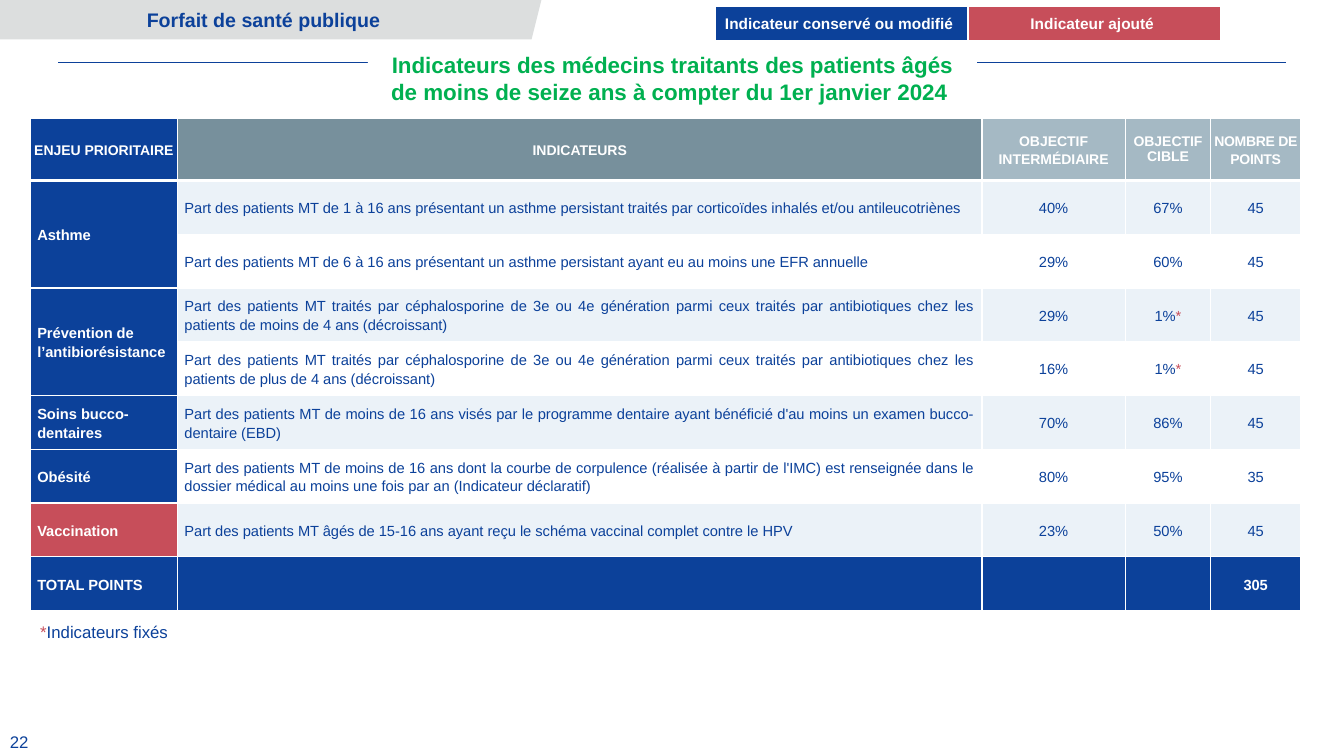
from lxml.etree import SubElement
from pptx import Presentation
from pptx.dml.color import RGBColor
from pptx.enum.shapes import MSO_CONNECTOR, MSO_SHAPE
from pptx.enum.text import MSO_ANCHOR, PP_ALIGN
from pptx.oxml import parse_xml
from pptx.oxml.ns import nsdecls, qn
from pptx.util import Inches, Pt

COLORS = {
    "blue": "0C419A", "red": "C74E5A", "green": "00B050", "white": "FFFFFF",
    "slate": "77909C", "mist": "A5B9C4", "pale": "EBF2F8", "grey": "DCDEDE",
}
HEADERS = [
    ("ENJEU PRIORITAIRE", "blue"), ("INDICATEURS", "slate"), ("OBJECTIF INTERMÉDIAIRE", "mist"),
    ("OBJECTIF CIBLE", "mist"), ("NOMBRE DE POINTS", "mist"),
]
INDICATORS = [
    ("Asthme", "Part des patients MT de 1 à 16 ans présentant un asthme persistant traités par "
     "corticoïdes inhalés et/ou antileucotriènes", "40%", "67%", "45"),
    ("", "Part des patients MT de 6 à 16 ans présentant un asthme persistant ayant eu au moins "
     "une EFR annuelle", "29%", "60%", "45"),
    ("Prévention de l’antibiorésistance", "Part des patients MT traités par céphalosporine de 3e ou 4e "
     "génération parmi ceux traités par antibiotiques chez les patients de moins de 4 ans (décroissant)",
     "29%", "1%*", "45"),
    ("", "Part des patients MT traités par céphalosporine de 3e ou 4e génération parmi ceux traités par "
     "antibiotiques chez les patients de plus de 4 ans (décroissant)", "16%", "1%*", "45"),
    ("Soins bucco-dentaires", "Part des patients MT de moins de 16 ans visés par le programme dentaire "
     "ayant bénéficié d'au moins un examen bucco-dentaire (EBD)", "70%", "86%", "45"),
    ("Obésité", "Part des patients MT de moins de 16 ans dont la courbe de corpulence (réalisée à partir "
     "de l'IMC) est renseignée dans le dossier médical au moins une fois par an (Indicateur déclaratif)",
     "80%", "95%", "35"),
    ("Vaccination", "Part des patients MT âgés de 15-16 ans ayant reçu le schéma vaccinal complet "
     "contre le HPV ", "23%", "50%", "45"),
    ("TOTAL POINTS", "", "", "", "305"),
]
COLUMN_WIDTHS = [1.46, 7.98, 1.42, 0.85, 0.89]
HEADER_HEIGHT = 0.62


def color(name):
    """Return the named colour."""
    return RGBColor.from_string(COLORS[name])


def write(frame, text, size, ink, bold=False, align=PP_ALIGN.LEFT):
    """Write one paragraph, with any asterisk in red, and return it."""
    frame.word_wrap = True
    para = frame.paragraphs[0]
    para.alignment = align
    para.font.name, para.font.size, para.font.bold = "Arial", Pt(size), bold
    para.font.color.rgb = color(ink)
    before, star, after = text.partition("*")
    for piece in filter(None, (before, star, after)):
        span = para.add_run()
        span.text = piece
        if piece == "*":
            span.font.color.rgb = color("red")
    return para


def add_block(page, box, text, fill, size, ink, outline=None, kind=MSO_SHAPE.RECTANGLE,
              anchor=MSO_ANCHOR.MIDDLE):
    """Add a filled shape with centred bold text."""
    block = page.shapes.add_shape(kind, *map(Inches, box))
    block.shadow.inherit = False
    block.fill.solid()
    block.fill.fore_color.rgb = color(fill)
    if outline:
        block.line.color.rgb = color(outline)
        block.line.width = Pt(1)
    else:
        block.line.fill.background()
    block.text_frame.vertical_anchor = anchor
    write(block.text_frame, text, size, ink, True, PP_ALIGN.CENTER)


def add_label(page, box, text, anchor=MSO_ANCHOR.TOP):
    """Add a small blue text box."""
    label = page.shapes.add_textbox(*map(Inches, box))
    label.text_frame.vertical_anchor = anchor
    write(label.text_frame, text, 12, "blue")


def add_title(page, left, top, width, height):
    """Add the green title, set over a thin rule spanning the box."""
    middle = Inches(top + 0.16)
    rule = page.shapes.add_connector(MSO_CONNECTOR.STRAIGHT, Inches(left), middle,
                                     Inches(left + width), middle)
    rule.line.color.rgb = color("blue")
    rule.line.width = Pt(0.5)
    SubElement(rule._element.spPr, qn("a:effectLst"))
    title = "Indicateurs des médecins traitants des patients âgés de moins de seize ans à compter du 1er janvier 2024 "
    add_block(page, (left + 3.07, top, 6.04, height), title, "white", 16, "green", anchor=MSO_ANCHOR.TOP)


def add_legend(page, left, top, width, height):
    """Add the two legend keys side by side."""
    keys = [("Indicateur conservé ou modifié ", "blue"), ("Indicateur ajouté ", "red")]
    for place, (text, fill) in reversed(list(enumerate(keys))):
        box = (left + place * width / 2, top, width / 2, height)
        add_block(page, box, text, fill, 11, "white", "white")


def dress_cell(cell, fill, top=1, bottom=1):
    """Set the white borders and the fill of a cell."""
    properties = cell._tc.get_or_add_tcPr()
    for side, width in zip("LRTB", (1, 1, top, bottom)):
        properties.append(parse_xml(
            f'<a:ln{side} {nsdecls("a")} w="{Pt(width)}"><a:solidFill>'
            f'<a:srgbClr val="{COLORS["white"]}"/></a:solidFill></a:ln{side}>'))
    if fill:
        cell.fill.solid()
        cell.fill.fore_color.rgb = color(fill)
    else:
        cell.fill.background()


def write_cell(cell, text, size, ink, bold, align, inset):
    """Write a vertically centred cell and return its paragraph."""
    cell.vertical_anchor = MSO_ANCHOR.MIDDLE
    cell.margin_left = cell.margin_right = Inches(inset)
    cell.margin_top = cell.margin_bottom = 0
    para = write(cell.text_frame, text, size, ink, bold, align)
    para.line_spacing, para.space_after = 1.15, Pt(10)
    return para


def add_indicators(page, left, top, width, height):
    """Add the table of indicators, targets and points."""
    box = map(Inches, (left, top, width, height))
    table = page.shapes.add_table(len(INDICATORS) + 1, len(HEADERS), *box).table
    table.horz_banding = False
    for column, column_width in zip(table.columns, COLUMN_WIDTHS):
        column.width = Inches(column_width)
    for row in table.rows:
        row.height = Inches((height - HEADER_HEIGHT) / len(INDICATORS))
    table.rows[0].height = Inches(HEADER_HEIGHT)

    for index, (text, fill) in enumerate(HEADERS):
        cell = table.cell(0, index)
        dress_cell(cell, fill, bottom=3)
        para = write_cell(cell, text, 10, "white", True, PP_ALIGN.CENTER, 0.02)
        if text == "OBJECTIF CIBLE":
            para.line_spacing = para.space_after = None
        if text == "NOMBRE DE POINTS":
            para.runs[0]._r.get_or_add_rPr().set("spc", "-20")

    for number, values in enumerate(INDICATORS, 1):
        total = number == len(INDICATORS)
        for index, text in enumerate(values):
            cell = table.cell(number, index)
            strong = total or index == 0
            fill = "blue" if strong else "pale" if number % 2 else None
            if text == "Vaccination":
                fill = "red"
            dress_cell(cell, fill, top=3 if number == 1 else 1)
            align = (PP_ALIGN.LEFT, PP_ALIGN.JUSTIFY)[index] if index < 2 else PP_ALIGN.CENTER
            if text:
                write_cell(cell, text, 10.5, "white" if strong else "blue", strong, align, 0.07)
        if not values[0]:
            table.cell(number - 1, 0).merge(table.cell(number, 0))


def main():
    """Build the deck."""
    deck = Presentation()
    deck.slide_width, deck.slide_height = Inches(13.33), Inches(7.5)
    page = deck.slides.add_slide(deck.slide_layouts[6])
    add_label(page, (0, 7.2, 0.79, 0.31), "22", MSO_ANCHOR.BOTTOM)
    add_title(page, 0.58, 0.46, 12.17, 0.64)
    add_indicators(page, 0.3, 1.17, 12.6, 4.89)
    add_label(page, (0.3, 6.12, 8.92, 0.3), "*Indicateurs fixés")
    add_legend(page, 7.09, 0.06, 5.02, 0.34)
    add_block(page, (-0.14, 0, 5.51, 0.39), "Forfait de santé publique", "grey", 14, "blue",
              kind=MSO_SHAPE.PARALLELOGRAM)
    deck.save("out.pptx")


if __name__ == "__main__":
    main()
